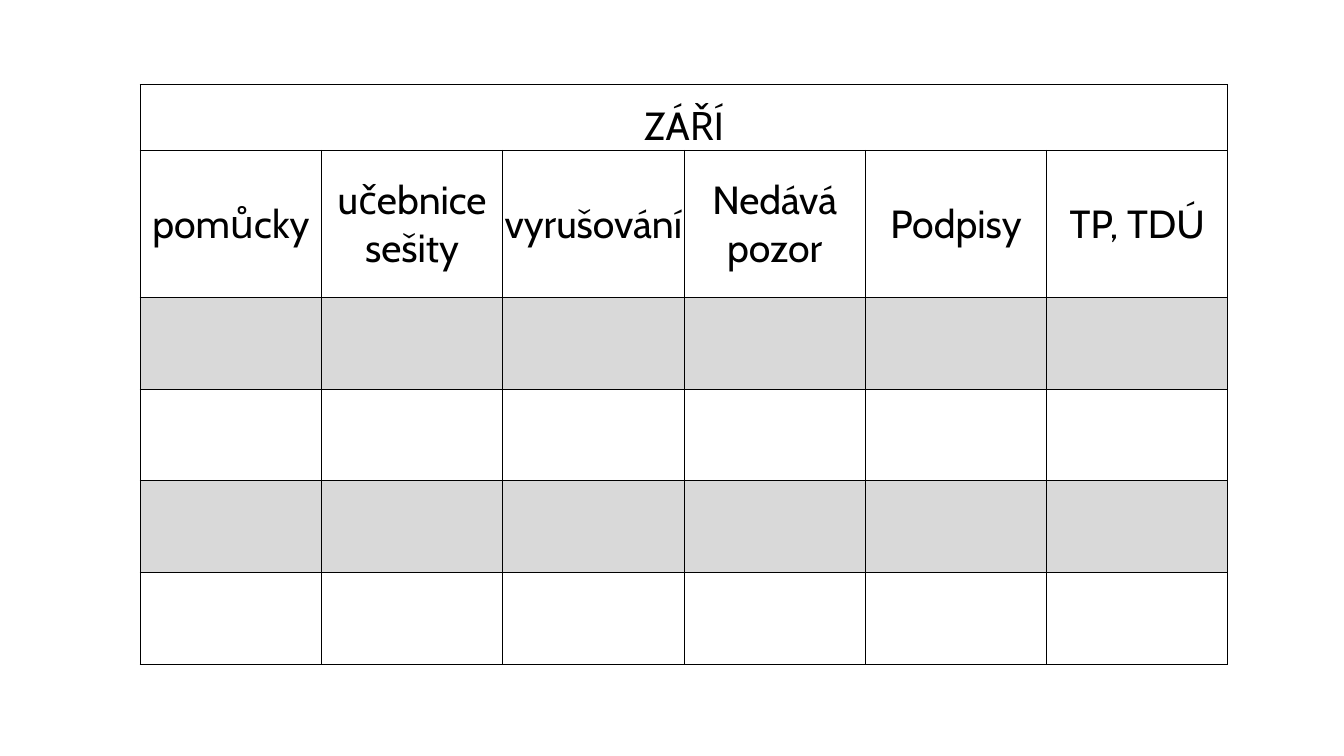
from pptx import Presentation
from pptx.dml.color import RGBColor
from pptx.enum.text import MSO_ANCHOR, PP_ALIGN
from pptx.oxml.ns import qn
from pptx.util import Inches, Pt
from lxml.etree import SubElement

BLACK = RGBColor(0x00, 0x00, 0x00)
WHITE = RGBColor(0xFF, 0xFF, 0xFF)
GREY = RGBColor(0xD9, 0xD9, 0xD9)

TITLE = "ZÁŘÍ"
HEADS = ["pomůcky", "učebnice sešity", "vyrušování",
         "Nedává pozor", "Podpisy", "TP, TDÚ"]
HEIGHTS = [0.65, 1.46] + [0.91] * 4
THIN, THICK = 0.5, 1


def write(cell, text, size=28, font="Cabin", color=BLACK, anchor=MSO_ANCHOR.MIDDLE):
    cell.vertical_anchor = anchor
    cell.margin_left = cell.margin_right = cell.margin_top = Inches(0.01)
    cell.margin_bottom = 0
    para = cell.text_frame.paragraphs[0]
    para.alignment = PP_ALIGN.CENTER
    run = para.add_run()
    run.text = text
    run.font.size = Pt(size)
    run.font.name = font
    run.font.color.rgb = color


def border(cell, **widths):
    """Draw the cell's sides; widths in points, keyed L, R, T, B in that order."""
    props = cell._tc.get_or_add_tcPr()
    for side, width in widths.items():
        line = SubElement(props, qn(f"a:ln{side}"), w=str(Pt(width)))
        fill = SubElement(line, qn("a:solidFill"))
        SubElement(fill, qn("a:srgbClr"), val=str(BLACK))


prs = Presentation()
prs.slide_width = Inches(13.33)
prs.slide_height = Inches(7.5)
slide = prs.slides.add_slide(prs.slide_layouts[6])
slide.background.fill.solid()
slide.background.fill.fore_color.rgb = WHITE

rows, cols = len(HEIGHTS), len(HEADS)
frame = slide.shapes.add_table(rows, cols, Inches(1.39), Inches(0.84),
                               Inches(10.79), Inches(sum(HEIGHTS)))
table = frame.table
table.first_row = table.horz_banding = False
for col in table.columns:
    col.width = Inches(10.79 / cols)
for row, height in zip(table.rows, HEIGHTS):
    row.height = Inches(height)

table.cell(0, 0).merge(table.cell(0, cols - 1))
for r in range(rows):
    for c in range(cols):
        cell = table.cell(r, c)
        border(cell,
               L=THICK if c == 0 else THIN,
               R=THICK if r == 0 or c == cols - 1 else THIN,
               T=THICK if r == 0 else THIN,
               B=THIN)
        cell.fill.solid()
        cell.fill.fore_color.rgb = GREY if r in (2, 4) else WHITE

write(table.cell(0, 0), TITLE, anchor=MSO_ANCHOR.BOTTOM)
for c, head in enumerate(HEADS):
    write(table.cell(1, c), head)

prs.save("out.pptx")
